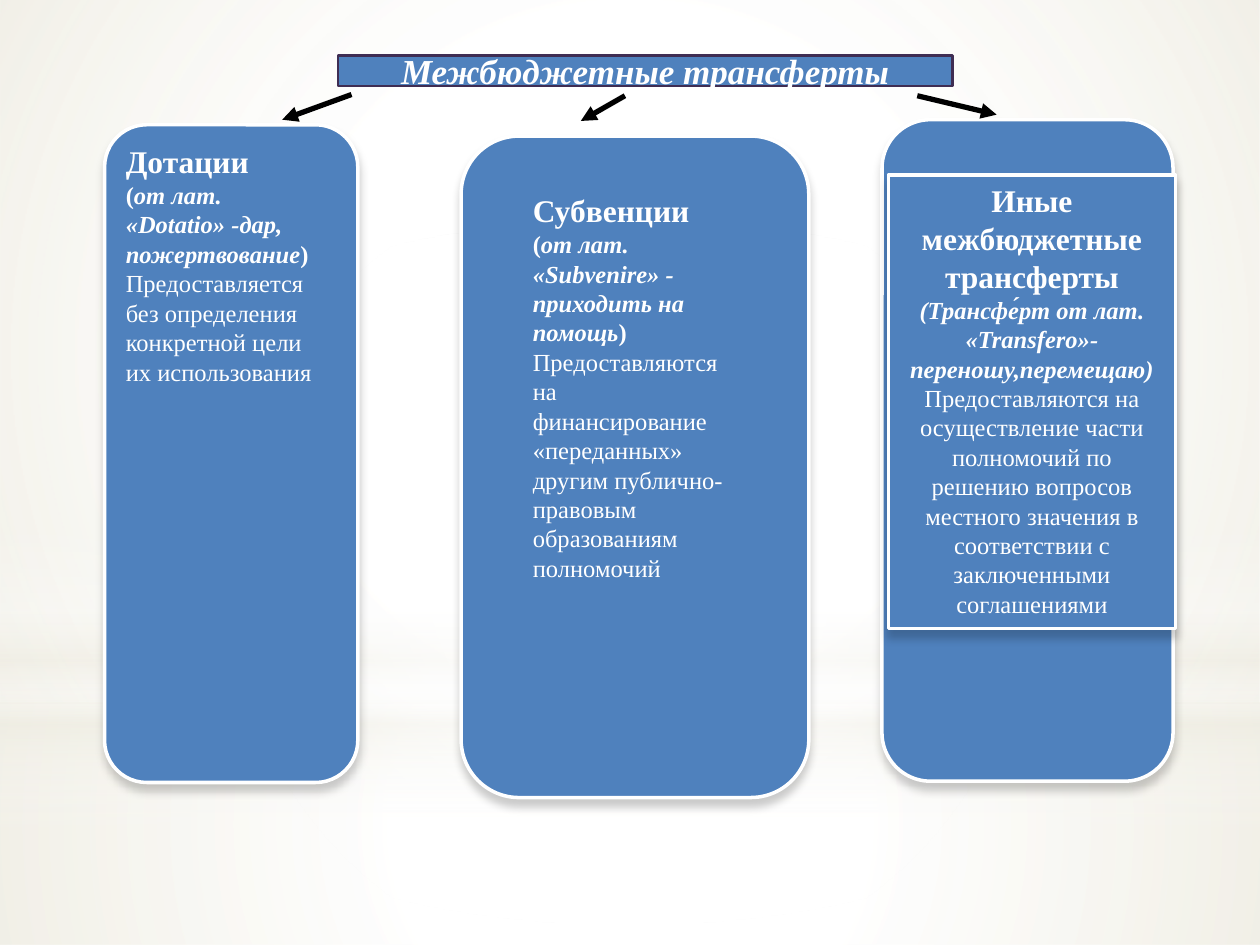
from dataclasses import dataclass
from typing import Optional

from lxml import etree
from pptx import Presentation
from pptx import util as u
from pptx.dml.color import RGBColor
from pptx.enum import shapes, text
from pptx.oxml import ns

COLORS = {"white": "FFFFFF", "cream": "EEECE1", "blue": "4F81BD",
          "plum": "3F2D53", "black": "000000"}
FONT = "Times New Roman"
PRESET = shapes.MSO_SHAPE


@dataclass(frozen=True)
class Area:
    left: float
    top: float
    width: float
    height: float

    def lengths(self) -> list:
        return [u.Inches(n) for n in (self.left, self.top, self.width, self.height)]


@dataclass(frozen=True)
class Glow:
    """Background layer; stops are (position %, colour name, opacity %)."""
    preset: PRESET
    area: Area
    stops: tuple
    angle: Optional[int] = None


@dataclass(frozen=True)
class Note:
    area: Area
    name: str
    origin: str
    purpose: str


@dataclass(frozen=True)
class Arrow:
    start: tuple
    end: tuple


GLOWS = [
    Glow(PRESET.RECTANGLE, Area(0, 5.58, 10, 1.92),
         ((0, "white", 91), (37, "white", 76), (100, "cream", 79))),
    Glow(PRESET.RECTANGLE, Area(0, 0, 10, 5.58),
         ((0, "white", 89), (48, "white", 62), (100, "cream", 79))),
    Glow(PRESET.RECTANGLE, Area(0, 4.12, 10, 2.5),
         ((0, "white", 0), (29, "white", 30), (45, "cream", 40),
          (55, "white", 26), (65, "cream", 60), (100, "white", 0)), angle=90),
    Glow(PRESET.OVAL, Area(0, 1.75, 10, 5.58),
         ((0, "white", 100), (56, "white", 0))),
]
COLUMNS = [Area(0.83, 0.99, 2.01, 5.22), Area(3.66, 1.08, 2.76, 5.25),
           Area(7, 0.95, 2.31, 5.25)]
NOTES = [
    Note(Area(0.9, 1.08, 1.73, 2.05), "Дотации",
         "от лат. «Dotatio» -дар, пожертвование",
         "Предоставляется без определения конкретной цели их использования"),
    Note(Area(4.13, 1.47, 1.81, 3.23), "Субвенции",
         "от лат. «Subvenire» - приходить на помощь",
         "Предоставляются на финансирование «переданных» другим "
         "публично-правовым образованиям полномочий"),
]
ARROWS = [Arrow((2.79, 0.75), (2.24, 0.95)), Arrow((4.96, 0.76), (4.61, 0.96)),
          Arrow((7.28, 0.76), (7.91, 0.91))]


def rgb(name: str) -> RGBColor:
    return RGBColor.from_string(COLORS[name])


def add_xml(parent, tag: str, **attributes):
    return etree.SubElement(parent, ns.qn(tag),
                            {key: str(value) for key, value in attributes.items()})


def add_color(parent, name: str, opacity: int) -> None:
    color = add_xml(parent, "a:srgbClr", val=COLORS[name])
    add_xml(color, "a:alpha", val=opacity * 1000)


def paint(shape, line: str, width: float) -> None:
    shape.fill.solid()
    shape.fill.fore_color.rgb = rgb("blue")
    shape.line.color.rgb = rgb(line)
    shape.line.width = u.Pt(width)


def add_glow(page, glow: Glow) -> None:
    shape = page.shapes.add_shape(glow.preset, *glow.area.lengths())
    shape.shadow.inherit = False
    shape.line.fill.background()
    shape.fill.background()
    properties = shape._element.spPr
    empty = properties.find(ns.qn("a:noFill"))
    gradient = etree.Element(ns.qn("a:gradFill"), {"rotWithShape": "1"})
    stops = add_xml(gradient, "a:gsLst")
    for position, color, opacity in glow.stops:
        add_color(add_xml(stops, "a:gs", pos=position * 1000), color, opacity)
    if glow.angle is None:
        center = add_xml(gradient, "a:path", path="circle")
        add_xml(center, "a:fillToRect", l=50000, t=50000, r=50000, b=50000)
    else:
        add_xml(gradient, "a:lin", ang=glow.angle * 60000, scaled=0)
    properties.replace(empty, gradient)


def add_panel(page, preset: PRESET, area: Area):
    """Blue panel with a white outline and a soft shadow below."""
    panel = page.shapes.add_shape(preset, *area.lengths())
    paint(panel, "white", 2)
    panel.shadow.inherit = False
    effects = panel._element.spPr.find(ns.qn("a:effectLst"))
    shadow = add_xml(effects, "a:outerShdw", blurRad=u.Pt(5), dist=u.Pt(4),
                     dir=90 * 60000, rotWithShape=0)
    add_color(shadow, "black", 20)
    return panel


def add_span(para, wording: str, *, size: float = 14, font: str = FONT,
             bold: bool = False, italic: bool = False) -> None:
    span = para.add_run()
    span.text = wording
    span.font.name = font
    span.font.size = u.Pt(size)
    span.font.bold = bold
    span.font.italic = italic
    span.font.color.rgb = rgb("white")


def add_note(page, note: Note) -> None:
    frame = page.shapes.add_textbox(*note.area.lengths()).text_frame
    frame.word_wrap = True
    frame.auto_size = text.MSO_AUTO_SIZE.SHAPE_TO_FIT_TEXT
    add_span(frame.paragraphs[0], note.name, size=18, bold=True)
    para = frame.add_paragraph()
    add_span(para, "(", bold=True)
    add_span(para, note.origin, bold=True, italic=True)
    add_span(para, ")", bold=True)
    add_span(frame.add_paragraph(), note.purpose)


def add_arrow(page, arrow: Arrow) -> None:
    ends = [u.Inches(n) for n in arrow.start + arrow.end]
    line = page.shapes.add_connector(shapes.MSO_CONNECTOR.STRAIGHT, *ends)
    line.line.color.rgb = rgb("black")
    line.line.width = u.Pt(3)
    add_xml(line.line._get_or_add_ln(), "a:tailEnd", type="triangle")
    add_xml(line._element.spPr, "a:effectLst")


def format_title(page) -> None:
    title = page.shapes.title
    title.left, title.top, title.width, title.height = Area(2.68, 0.44, 4.88, 0.24).lengths()
    paint(title, "plum", 1.25)
    frame = title.text_frame
    frame.word_wrap = False
    frame.auto_size = text.MSO_AUTO_SIZE.NONE
    frame.vertical_anchor = text.MSO_ANCHOR.MIDDLE
    para = frame.paragraphs[0]
    para.alignment = text.PP_ALIGN.CENTER
    add_span(para, "Межбюджетные трансферты", size=20, bold=True, italic=True)
    page.shapes._spTree.append(title._element)


def add_other_transfers(page) -> None:
    panel = add_panel(page, PRESET.RECTANGLE, Area(7.05, 1.39, 2.28, 3.6))
    frame = panel.text_frame
    frame.word_wrap = True
    frame.auto_size = text.MSO_AUTO_SIZE.SHAPE_TO_FIT_TEXT
    frame.vertical_anchor = text.MSO_ANCHOR.TOP
    para = frame.paragraphs[0]
    para.alignment = text.PP_ALIGN.CENTER
    add_span(para, "Иные межбюджетные трансферты", size=18, bold=True)
    add_span(para, " ", size=9, font="Lato")
    add_span(para, "(Трансфе́рт от лат. «Transfero»-переношу,перемещаю) ",
             bold=True, italic=True)
    add_span(para, "Предоставляются на осуществление части полномочий по решению "
             "вопросов местного значения в соответствии с заключенными соглашениями")


def main() -> None:
    deck = Presentation()
    deck.slide_width, deck.slide_height = u.Inches(10), u.Inches(7.5)
    page = deck.slides.add_slide(deck.slide_layouts.get_by_name("Title Only"))
    for glow in GLOWS:
        add_glow(page, glow)
    format_title(page)
    for column in COLUMNS:
        add_panel(page, PRESET.FLOWCHART_ALTERNATE_PROCESS, column)
    for note in NOTES:
        add_note(page, note)
    for arrow in ARROWS:
        add_arrow(page, arrow)
    add_other_transfers(page)
    deck.save("out.pptx")


if __name__ == "__main__":
    main()
